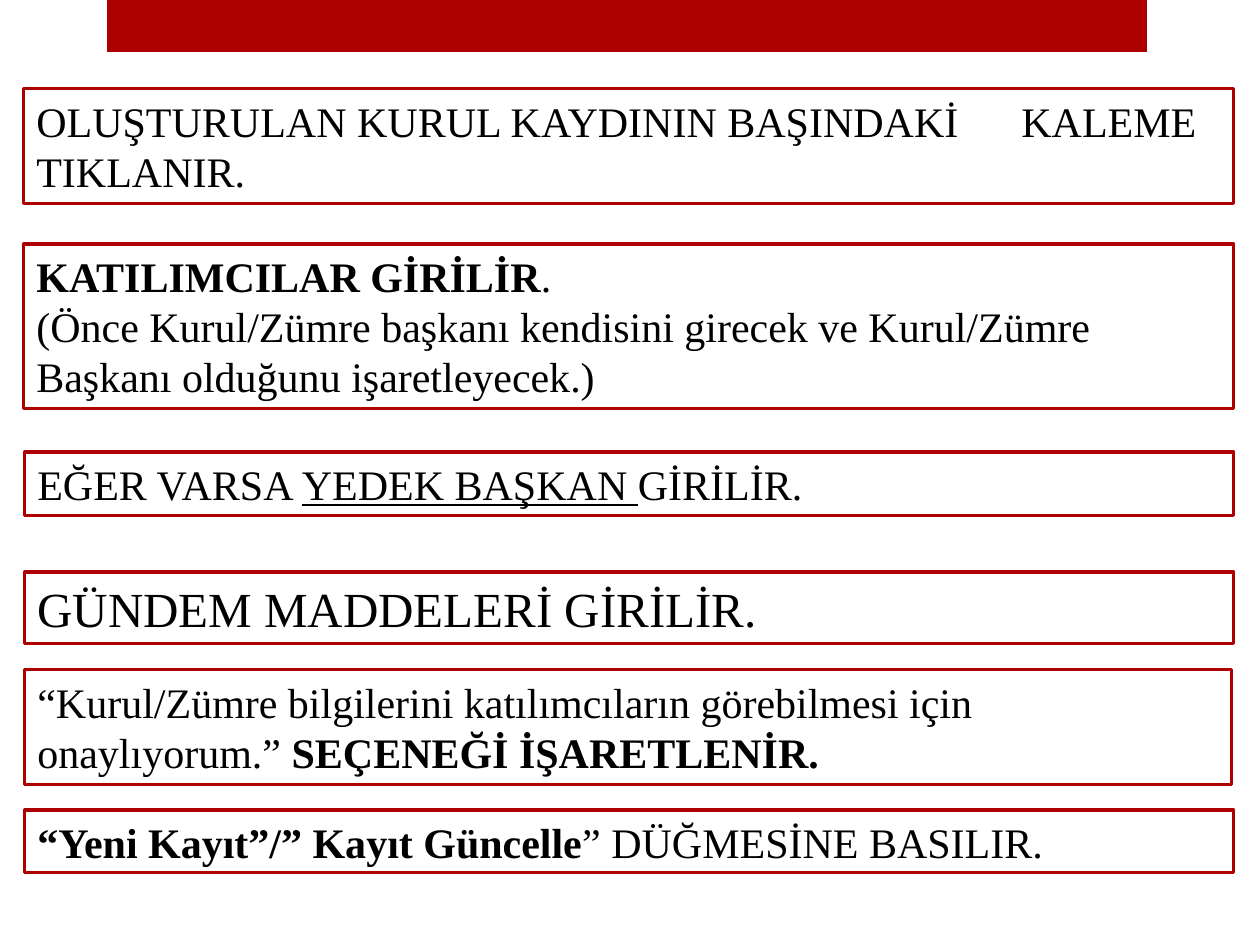
from lxml.etree import SubElement
from pptx import Presentation
from pptx.dml.color import RGBColor
from pptx.enum.shapes import MSO_SHAPE
from pptx.enum.text import MSO_ANCHOR, MSO_AUTO_SIZE, PP_ALIGN
from pptx.oxml.ns import qn
from pptx.util import Emu, Pt

RED, WHITE, BLACK = "AD0101", "FFFFFF", "000000"
FONT = "Times New Roman"
BOLD, LINE = {"bold": True}, {"underline": True}
BAR = (107, 0, 1040, 52)
TAB = 985

# (left, top, width, height), paragraphs of (text, format) runs
STEPS = [
    ((24, 89, 1210, 115), [
        [("OLUŞTURULAN KURUL KAYDININ BAŞINDAKİ\tKALEME TIKLANIR.", {})]]),
    ((24, 244, 1210, 165), [
        [("KATILIMCILAR GİRİLİR", BOLD), (".", {})],
        [("(Önce Kurul/Zümre başkanı kendisini girecek ve Kurul/Zümre "
          "Başkanı olduğunu işaretleyecek.)", {})]]),
    ((25, 452, 1209, 64), [
        [("EĞER VARSA ", {}), ("YEDEK BAŞKAN ", LINE), ("GİRİLİR.", {})]]),
    ((25, 572, 1209, 72), [
        [("GÜNDEM MADDELERİ GİRİLİR.", {"size": 28})]]),
    ((25, 670, 1207, 115), [
        [("“Kurul/Zümre bilgilerini katılımcıların görebilmesi için "
          "onaylıyorum.” ", {}), ("SEÇENEĞİ İŞARETLENİR.", BOLD)]]),
    ((25, 810, 1209, 63), [
        [("“Yeni Kayıt”/” Kayıt Güncelle", BOLD),
         ("” DÜĞMESİNE BASILIR.", {})]]),
]


def px(n):
    return Emu(round(n * 914400 / 126))


def color(code):
    return RGBColor.from_string(code)


def write(para, text, size=24, bold=False, underline=False):
    run = para.add_run()
    run.text = text
    font = run.font
    font.name, font.size = FONT, Pt(size)
    font.bold, font.underline = bold, underline
    font.color.rgb = color(BLACK)


def rect(slide, place, fill, line=None):
    box = slide.shapes.add_shape(MSO_SHAPE.RECTANGLE, *map(px, place))
    box.shadow.inherit = False
    box.fill.solid()
    box.fill.fore_color.rgb = color(fill)
    if line:
        box.line.color.rgb = color(line)
        box.line.width = Pt(1.75)
    else:
        box.line.fill.background()
    return box


def set_tab(para, pos):
    tabs = SubElement(para._p.get_or_add_pPr(), qn("a:tabLst"))
    SubElement(tabs, qn("a:tab"), pos=str(px(pos)), algn="l")


def add_step(slide, place, paras):
    frame = rect(slide, place, WHITE, RED).text_frame
    frame.word_wrap = True
    frame.auto_size = MSO_AUTO_SIZE.SHAPE_TO_FIT_TEXT
    frame.vertical_anchor = MSO_ANCHOR.TOP
    for i, runs in enumerate(paras):
        para = frame.add_paragraph() if i else frame.paragraphs[0]
        para.alignment = PP_ALIGN.LEFT
        for text, style in runs:
            if "\t" in text:
                set_tab(para, TAB)
            write(para, text, **style)


def main():
    """Build the slide of board record steps."""
    deck = Presentation()
    deck.slide_width, deck.slide_height = px(1260), px(945)
    slide = deck.slides.add_slide(deck.slide_layouts[6])
    rect(slide, BAR, RED)
    for place, paras in STEPS:
        add_step(slide, place, paras)
    deck.save("out.pptx")


if __name__ == "__main__":
    main()
